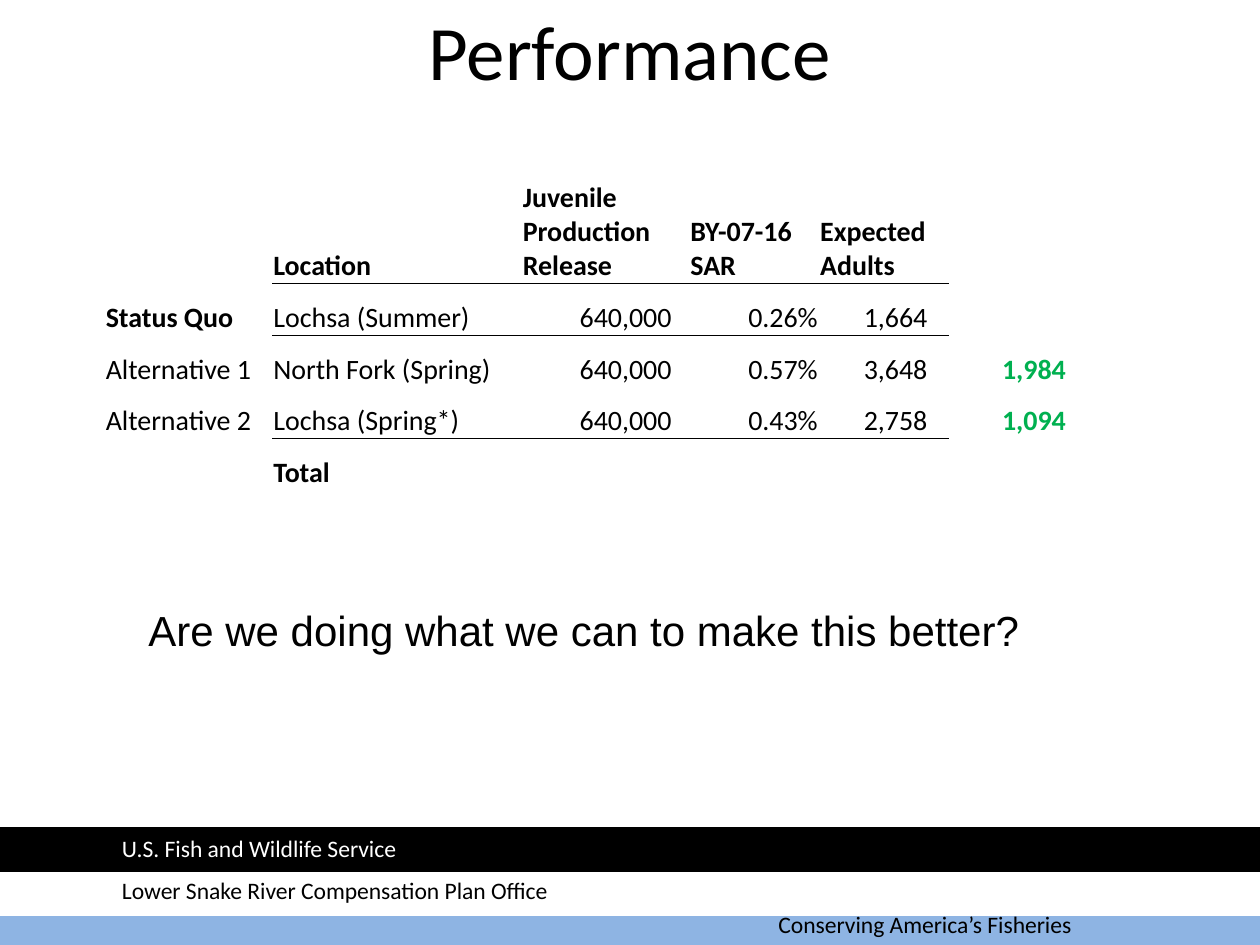
from lxml import etree
from pptx import Presentation
from pptx.dml.color import RGBColor
from pptx.enum.shapes import MSO_SHAPE
from pptx.enum.text import MSO_ANCHOR, MSO_AUTO_SIZE, PP_ALIGN
from pptx.oxml.ns import qn
from pptx.util import Inches, Pt

RECTANGLE = MSO_SHAPE.RECTANGLE
LEFT, CENTER, RIGHT = PP_ALIGN.LEFT, PP_ALIGN.CENTER, PP_ALIGN.RIGHT
BOTTOM, MIDDLE = MSO_ANCHOR.BOTTOM, MSO_ANCHOR.MIDDLE
NO_AUTOFIT = MSO_AUTO_SIZE.NONE

BLACK = RGBColor(0x00, 0x00, 0x00)
WHITE = RGBColor(0xFF, 0xFF, 0xFF)
BLUE = RGBColor(0x8E, 0xB4, 0xE3)
GREEN = RGBColor(0x00, 0xB0, 0x50)

TITLE_ONLY_LAYOUT = 5
PLAIN_TABLE_STYLE = "{2D5ABB26-0587-4C30-8999-92F81FD0307C}"
BAND_HEIGHT = 0.33

COLUMN_WIDTHS = [1.33, 1.98, 1.33, 1.03, 1.03, 1.03]
HEADER_HEIGHT, ROW_HEIGHT = 1.24, 0.41
RIGHT_INSETS = [0.01, 0.01, 0.14, 0.01, 0.17, 0.1]
FIRST_NUMBER_COLUMN, DIFFERENCE_COLUMN = 2, 5
RULED_COLUMNS = range(1, 5)
RULED_EDGES = {0: "a:lnB", 1: "a:lnT", 3: "a:lnB", 4: "a:lnT"}
BOLD_LABELS = {"Status Quo", "Total"}
ROWS = [
    ["", "Location", "Juvenile Production Release", "BY-07-16 SAR", "Expected Adults", ""],
    ["Status Quo", "Lochsa (Summer)", "640,000", "0.26%", "1,664", ""],
    ["Alternative 1", "North Fork (Spring)", "640,000", "0.57%", "3,648", "1,984"],
    ["Alternative 2", "Lochsa (Spring*)", "640,000", "0.43%", "2,758", "1,094"],
    ["", "Total", "", "", "", ""],
]


def format_paragraph(paragraph, size, color=BLACK, name="Calibri", bold=False, alignment=LEFT):
    paragraph.alignment = alignment
    font = paragraph.font
    font.size, font.name, font.bold = Pt(size), name, bold
    font.color.rgb = color


def add_band(slide, left, top, color):
    band = slide.shapes.add_shape(
        RECTANGLE, Inches(left), Inches(top), Inches(10), Inches(BAND_HEIGHT))
    band.shadow.inherit = False
    band.fill.solid()
    band.fill.fore_color.rgb = color
    band.line.color.rgb = color
    band.line.width = Pt(2)


def add_text(slide, left, top, width, height, text, size, **style):
    box = slide.shapes.add_textbox(Inches(left), Inches(top), Inches(width), Inches(height))
    box.text_frame.word_wrap = True
    box.text_frame.text = text
    format_paragraph(box.text_frame.paragraphs[0], size, **style)


def add_footer(slide):
    add_band(slide, -0.01, 7.17, BLUE)
    add_band(slide, 0, 6.93, WHITE)
    add_band(slide, 0, 6.58, BLACK)
    add_text(slide, 6.08, 7.17, 3.67, BAND_HEIGHT, "Conserving America’s Fisheries", 13.5)
    add_text(slide, 0.87, 6.57, 4.16, BAND_HEIGHT, "U.S. Fish and Wildlife Service", 13.5,
             color=WHITE)
    add_text(slide, 0.87, 6.9, 4.97, BAND_HEIGHT,
             "Lower Snake River Compensation Plan Office", 13.5)


def set_title(slide, text):
    title = slide.shapes.title
    title.left, title.top = Inches(0.5), Inches(0.17)
    title.width, title.height = Inches(9), Inches(0.45)
    frame = title.text_frame
    frame.text = text
    frame.auto_size = NO_AUTOFIT
    frame.vertical_anchor = MIDDLE
    format_paragraph(frame.paragraphs[0], 44, alignment=CENTER)


def add_rule(cell, edge):
    """Draw a thin black border on one edge of a cell."""
    properties = cell._tc.get_or_add_tcPr()
    line = etree.Element(qn(edge), w=str(Pt(0.5)))
    fill = etree.SubElement(line, qn("a:solidFill"))
    etree.SubElement(fill, qn("a:srgbClr"), val=str(BLACK))
    properties.insert(0, line)


def fill_cell(cell, row, column, text):
    is_header = row == 0
    is_difference = column == DIFFERENCE_COLUMN
    is_number = not is_header and column >= FIRST_NUMBER_COLUMN
    cell.fill.background()
    cell.vertical_anchor = BOTTOM
    cell.margin_left = cell.margin_top = Inches(0.01)
    cell.margin_right = Inches(RIGHT_INSETS[column] if is_number else 0.01)
    cell.margin_bottom = 0
    cell.text = text
    format_paragraph(
        cell.text_frame.paragraphs[0], 16,
        color=GREEN if is_difference else BLACK,
        bold=is_header or is_difference or text in BOLD_LABELS,
        alignment=RIGHT if is_number else LEFT)
    if column in RULED_COLUMNS and row in RULED_EDGES:
        add_rule(cell, RULED_EDGES[row])


def add_performance_table(slide):
    height = HEADER_HEIGHT + ROW_HEIGHT * (len(ROWS) - 1)
    table = slide.shapes.add_table(
        len(ROWS), len(COLUMN_WIDTHS), Inches(0.83), Inches(1.01),
        Inches(sum(COLUMN_WIDTHS)), Inches(height)).table
    table.first_row = table.horz_banding = False
    table._tbl.tblPr.find(qn("a:tableStyleId")).text = PLAIN_TABLE_STYLE
    for column, width in zip(table.columns, COLUMN_WIDTHS):
        column.width = Inches(width)
    for row, texts in enumerate(ROWS):
        table.rows[row].height = Inches(ROW_HEIGHT if row else HEADER_HEIGHT)
        for column, text in enumerate(texts):
            fill_cell(table.cell(row, column), row, column, text)


def main():
    presentation = Presentation()
    presentation.slide_width, presentation.slide_height = Inches(10), Inches(7.5)
    slide = presentation.slides.add_slide(presentation.slide_layouts[TITLE_ONLY_LAYOUT])
    add_footer(slide)
    set_title(slide, "Performance")
    add_text(slide, 1.08, 4.75, 7.17, 0.91,
             "Are we doing what we can to make this better?", 24, name="Arial")
    add_performance_table(slide)
    presentation.save("out.pptx")


if __name__ == "__main__":
    main()
